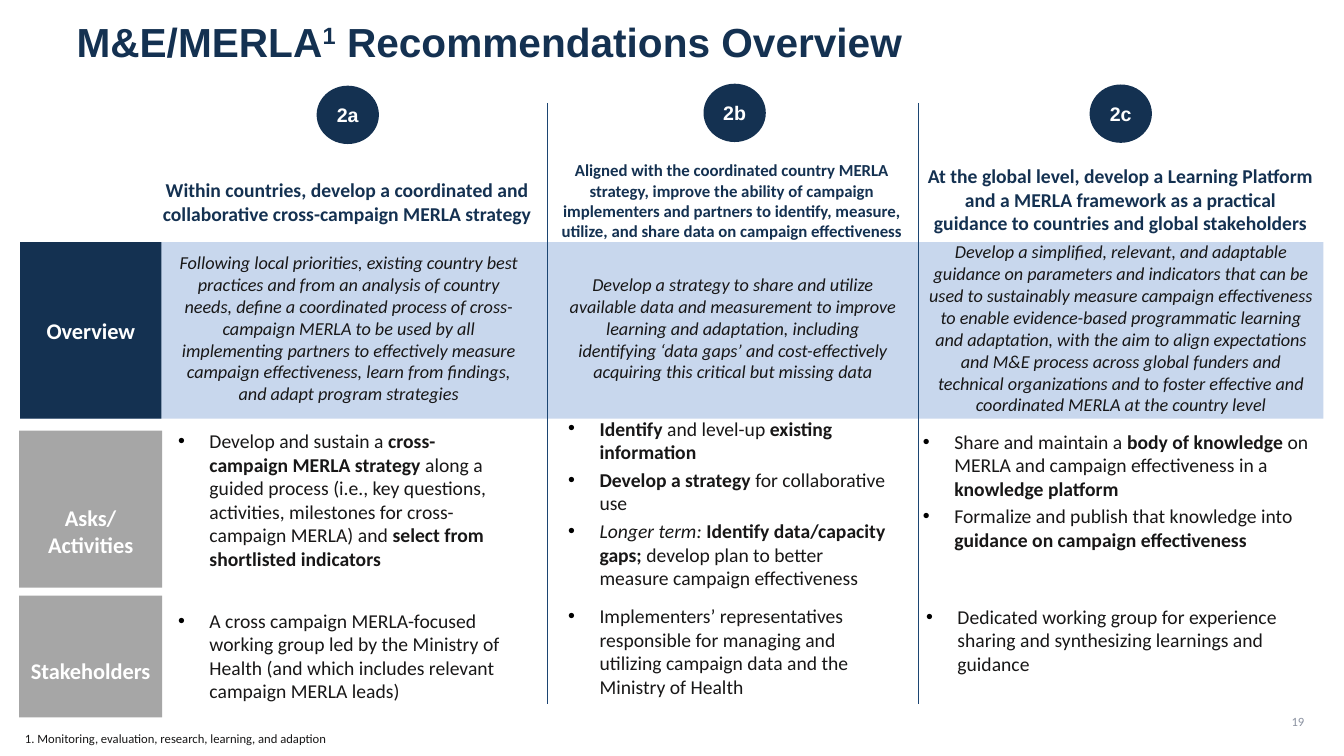
from dataclasses import dataclass
from typing import NamedTuple

from lxml.etree import SubElement
from pptx import Presentation
from pptx.dml.color import RGBColor as Rgb
from pptx.enum.shapes import MSO_CONNECTOR as Link, MSO_SHAPE as Geo
from pptx.enum.text import MSO_ANCHOR as Anchor, PP_ALIGN as Align
from pptx.oxml.ns import qn
from pptx.util import Cm, Pt


@dataclass(frozen=True)
class Theme:
    navy: Rgb = Rgb(0x14, 0x31, 0x51)
    rule: Rgb = Rgb(0x1C, 0x45, 0x72)
    pale: Rgb = Rgb(0xC8, 0xD7, 0xED)
    gray: Rgb = Rgb(0xA6, 0xA6, 0xA6)
    mute: Rgb = Rgb(0x8A, 0x91, 0xA0)
    ink: Rgb = Rgb(0x18, 0x17, 0x17)
    white: Rgb = Rgb(0xFF, 0xFF, 0xFF)
    head: str = "Arial"
    body: str = "Calibri"
    title: int = 29
    label: int = 16
    text: int = 14
    brief: int = 13
    small: int = 12
    note: int = 9


class Box(NamedTuple):
    left: float
    top: float
    width: float
    height: float


class Style(NamedTuple):
    size: int
    color: Rgb
    face: str
    bold: bool | None = None
    slant: bool | None = None
    align: Align = Align.LEFT
    anchor: Anchor = Anchor.MIDDLE
    bullet: bool = False


class Run(NamedTuple):
    text: str
    mark: str = ""  # b bold, i italic, s superscript


class Block(NamedTuple):
    box: Box
    style: Style
    paras: list[list[Run]]


class Label(NamedTuple):
    box: Box
    fill: Rgb
    lines: list[str]
    drop: float  # extra inset above the text


T = Theme()
MID = Align.CENTER
TITLE = Style(T.title, T.navy, T.head, bold=True, anchor=Anchor.TOP)
HEAD = Style(T.text, T.navy, T.body, bold=True, align=MID, anchor=Anchor.TOP)
BRIEF = Style(T.brief, T.ink, T.body, slant=True, align=MID)
LIST = Style(T.text, T.ink, T.body, bullet=True)
LABEL = Style(T.label, T.white, T.body, bold=True, align=MID)
BADGE = Style(T.text, T.white, T.head, bold=True, align=MID)
NOTE = Style(T.note, T.ink, T.body)
PAGE = Style(T.note, T.mute, T.body, align=Align.RIGHT)

BLOCKS = [
    # Title, footnote and page number
    Block(Box(1.68, 0.43, 32, 1.52), TITLE,
          [[Run("M&E/MERLA"), Run("1", "s"), Run(" Recommendations Overview")]]),
    Block(Box(0.38, 18.24, 13.56, 0.74), NOTE,
          [[Run("1. Monitoring, evaluation, research, learning, and adaption")]]),
    Block(Box(31.65, 17.68, 1.47, 1.02), PAGE, [[Run("19")]]),
    # Column heads
    Block(Box(3.76, 4.37, 9.98, 1.45), HEAD, [[Run(
        "Within countries, develop a coordinated and collaborative "
        "cross-campaign MERLA strategy")]]),
    Block(Box(13.67, 3.91, 9.55, 2.31), HEAD._replace(size=T.small), [[Run(
        "Aligned with the coordinated country MERLA strategy, improve the ability of "
        "campaign implementers and partners to identify, measure, utilize, and share "
        "data on campaign effectiveness")]]),
    Block(Box(23.11, 4.01, 10.26, 2.06), HEAD, [[Run(
        "At the global level, develop a Learning Platform and a MERLA framework as a "
        "practical guidance to countries and global stakeholders")]]),
    # Overview row
    Block(Box(4.11, 6.07, 9.35, 4.39), BRIEF, [[Run(
        "Following local priorities, existing country best practices and from an analysis "
        "of country needs, define a coordinated process of cross-campaign MERLA to be used "
        "by all implementing partners to effectively measure campaign effectiveness, learn "
        "from findings, and adapt program strategies")]]),
    Block(Box(14.07, 6.76, 8.79, 3.35), BRIEF._replace(anchor=Anchor.TOP), [[Run(
        "Develop a strategy to share and utilize available data and measurement to improve "
        "learning and adaptation, including identifying ‘data gaps’ and cost-effectively "
        "acquiring this critical but missing data")]]),
    Block(Box(23.09, 6.02, 10.31, 4.5), BRIEF, [[Run(
        "Develop a simplified, relevant, and adaptable guidance on parameters and indicators "
        "that can be used to sustainably measure campaign effectiveness to enable "
        "evidence-based programmatic learning and adaptation, with the aim to align "
        "expectations and M&E process across global funders and technical organizations and "
        "to foster effective and coordinated MERLA at the country level")]]),
    # Asks row
    Block(Box(4.24, 10.52, 8.74, 4.14), LIST, [
        [Run("Develop and sustain a "), Run("cross-campaign MERLA strategy ", "b"),
         Run("along a guided process (i.e., key questions, activities, milestones for "
             "cross-campaign MERLA) and "),
         Run("select from shortlisted indicators", "b")]]),
    Block(Box(14.07, 10.54, 8.74, 4.27), LIST, [
        [Run("Identify", "b"), Run(" and level-up "), Run("existing information", "b")],
        [Run("Develop a strategy", "b"), Run(" for collaborative use")],
        [Run("Longer term: ", "i"), Run("Identify data/capacity gaps; ", "b"),
         Run("develop plan to better measure campaign effectiveness")]]),
    Block(Box(23.01, 10.29, 10.85, 4.14), LIST, [
        [Run("Share and maintain a "), Run("body of knowledge", "b"),
         Run(" on MERLA and campaign effectiveness in a "), Run("knowledge platform", "b")],
        [Run("Formalize and publish that knowledge into "),
         Run("guidance on campaign effectiveness", "b")]]),
    # Stakeholders row
    Block(Box(4.24, 14.99, 8.74, 3.07), LIST, [[Run(
        "A cross campaign MERLA-focused working group led by the Ministry of Health "
        "(and which includes relevant campaign MERLA leads)")]]),
    Block(Box(14.07, 14.88, 8.74, 3.07), LIST, [[Run(
        "Implementers’ representatives responsible for managing and utilizing campaign "
        "data and the Ministry of Health")]]),
    Block(Box(23.09, 14.63, 10.77, 3), LIST, [[Run(
        "Dedicated working group for experience sharing and synthesizing learnings "
        "and guidance")]]),
]

LABELS = [
    Label(Box(0.51, 6.1, 3.56, 4.45), T.navy, ["Overview"], 0),
    Label(Box(0.48, 10.85, 3.61, 3.96), T.gray, ["Asks/", "Activities"], 1.12),
    Label(Box(0.48, 15.01, 3.61, 3.07), T.gray, ["Stakeholders"], 0.69),
]
BADGES = {"2a": (7.98, 2.16), "2b": (17.73, 2.11), "2c": (27.46, 2.13)}


def place(box: Box) -> list[Cm]:
    return [Cm(n) for n in box]


def add_dot(para) -> None:
    props = para._p.get_or_add_pPr()
    props.set("marL", str(Cm(0.79)))
    props.set("indent", str(-Cm(0.79)))
    tint = SubElement(props, qn("a:buClr"))
    SubElement(tint, qn("a:srgbClr"), val="000000")
    SubElement(props, qn("a:buFont"), typeface="Arial")
    SubElement(props, qn("a:buChar"), char="•")


def write(frame, paras: list[list[Run]], style: Style) -> None:
    frame.word_wrap = True
    frame.vertical_anchor = style.anchor
    for i, runs in enumerate(paras):
        para = frame.paragraphs[0] if i == 0 else frame.add_paragraph()
        para.alignment = style.align
        if style.bullet:
            para.space_after = Pt(3)
            add_dot(para)
        font = para.font
        font.name, font.size = style.face, Pt(style.size)
        font.bold, font.italic = style.bold, style.slant
        font.color.rgb = style.color
        for item in runs:
            run = para.add_run()
            run.text = item.text
            if item.mark == "b":
                run.font.bold = True
            elif item.mark == "i":
                run.font.italic = True
            elif item.mark == "s":
                run._r.get_or_add_rPr().set("baseline", "30000")


def add_form(slide, kind: Geo, box: Box, fill: Rgb):
    form = slide.shapes.add_shape(kind, *place(box))
    form.shadow.inherit = False
    form.fill.solid()
    form.fill.fore_color.rgb = fill
    form.line.fill.background()
    return form


def add_rule(slide, left: float) -> None:
    rule = slide.shapes.add_connector(Link.STRAIGHT, Cm(left), Cm(2.59), Cm(left), Cm(17.75))
    rule.line.color.rgb = T.rule
    rule.line.width = Pt(1)
    SubElement(rule._element.spPr, qn("a:effectLst"))


def main() -> None:
    deck = Presentation()
    deck.slide_width, deck.slide_height = Cm(33.87), Cm(19.05)
    slide = deck.slides.add_slide(deck.slide_layouts[6])

    # Overview band and row labels
    add_form(slide, Geo.RECTANGLE, Box(0.51, 6.1, 32.84, 4.45), T.pale)
    for label in LABELS:
        frame = add_form(slide, Geo.RECTANGLE, label.box, label.fill).text_frame
        frame.margin_top = Cm(0.13 + label.drop)
        write(frame, [[Run(line)] for line in label.lines], LABEL)

    # Text
    for block in BLOCKS:
        frame = slide.shapes.add_textbox(*place(block.box)).text_frame
        write(frame, block.paras, block.style)
        if block.style is TITLE:
            frame.paragraphs[0].line_spacing = 0.9

    # Column rules and badges
    for left in (13.79, 23.14):
        add_rule(slide, left)
    for name, (left, top) in BADGES.items():
        frame = add_form(slide, Geo.OVAL, Box(left, top, 1.57, 1.47), T.navy).text_frame
        frame.margin_left = frame.margin_right = 0
        write(frame, [[Run(name)]], BADGE)

    deck.save("out.pptx")


if __name__ == "__main__":
    main()
